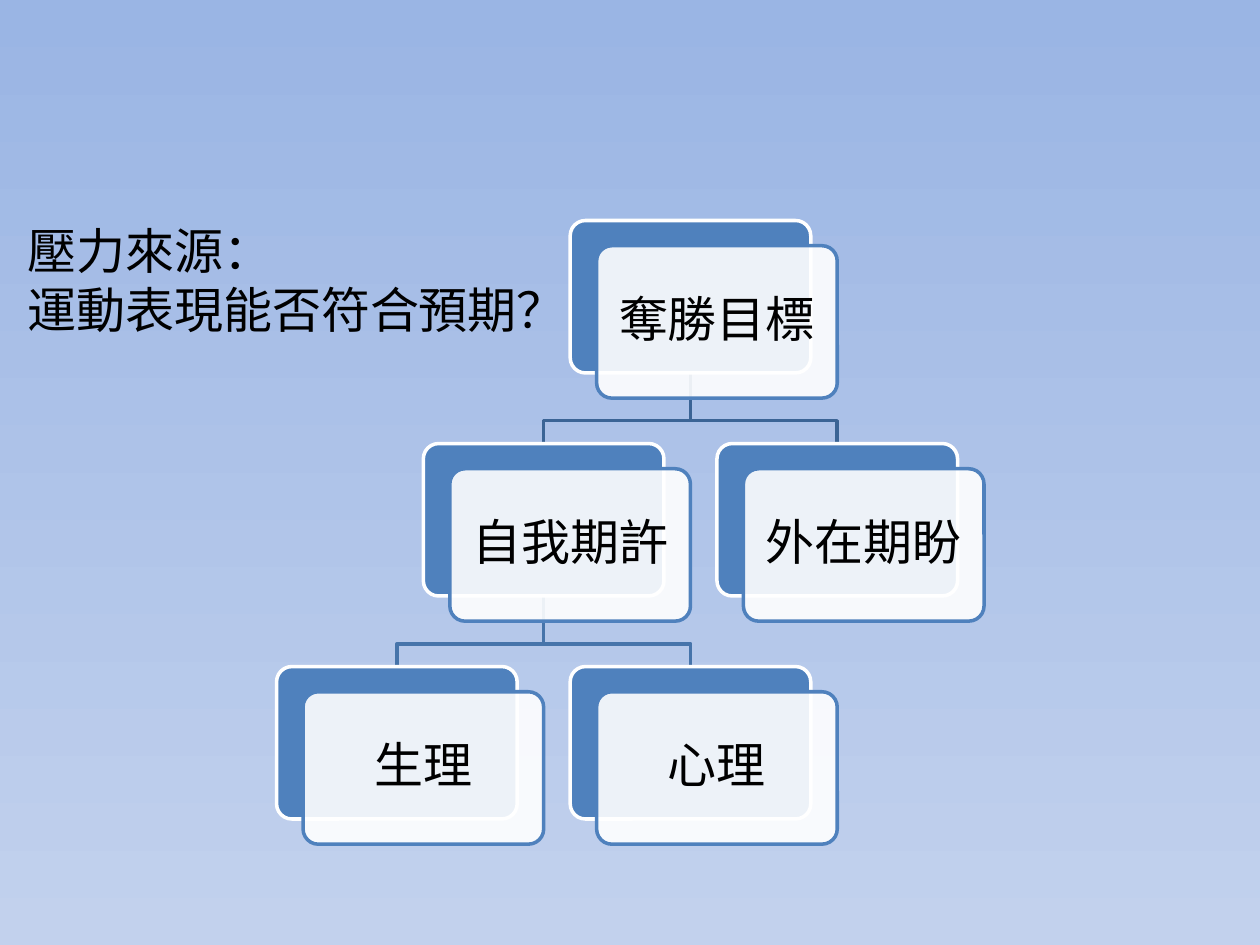
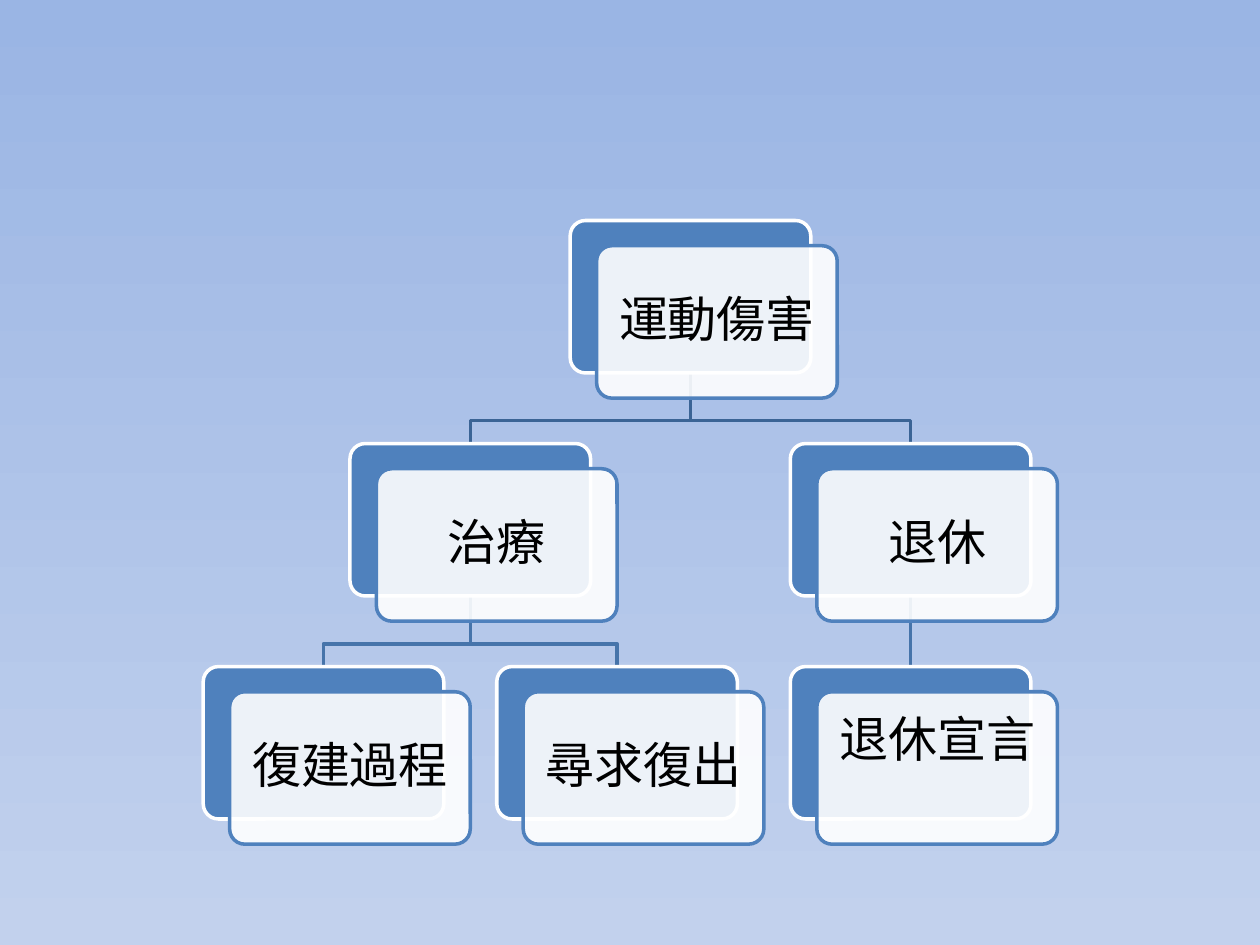
from lxml import etree
from pptx import Presentation
from pptx import util as u
from pptx.dml.color import RGBColor
from pptx.enum import shapes, text
from pptx.oxml import ns

WIDE, HIGH = 10, 7.5
FONT, SIZE = "Calibri", 28
SKY, MIST, BLUE, WHITE, BLACK = "9AB5E4", "C2D1ED", "4F81BD", "FFFFFF", "000000"
EDGES = ["3B6495", "4674AA"]
COL, ROW = 2.33, 1.77
CARD_W, CARD_H = 1.91, 1.21
SHIFT_X, SHIFT_Y = 0.21, 0.2
BEND = 0.38
ROOT = (5.48, 1.75)

GOAL = ("奪勝目標", 0, [
    ("自我期許", -0.5, [("生理", -1, []), ("心理", 0, [])]),
    ("外在期盼", 0.5, []),
])
INJURY = ("運動傷害", 0, [
    ("治療", -0.75, [("復建過程", -1.25, []), ("尋求復出", -0.25, [])]),
    ("退休", 0.75, [("退休宣言", 0.75, [])]),
])
LIFT = {"退休宣言": 0.42}


def tint(code):
    """Turn a hex string into a colour."""
    return RGBColor.from_string(code)


def stroke(shape, code):
    """Give a shape or connector its 2 pt line."""
    shape.line.color.rgb = tint(code)
    shape.line.width = u.Pt(2)


def style(para):
    """Set the shared font on a paragraph's runs."""
    for run in para.runs:
        run.font.name, run.font.size = FONT, u.Pt(SIZE)
        run.font.color.rgb = tint(BLACK)


def panel(slide, left, top, fill, line):
    """Add one rounded panel of a card."""
    box = slide.shapes.add_shape(
        shapes.MSO_SHAPE.ROUNDED_RECTANGLE,
        *map(u.Inches, (left, top, CARD_W, CARD_H)))
    box.adjustments[0] = 0.1
    box.shadow.inherit = False
    box.fill.solid()
    box.fill.fore_color.rgb = tint(fill)
    stroke(box, line)
    return box


def card(slide, mid, top, label):
    """Add a blue panel with a see-through label panel; return the blue one."""
    left = mid - CARD_W / 2
    back = panel(slide, left, top, BLUE, WHITE)
    front = panel(slide, left + SHIFT_X, top + SHIFT_Y, WHITE, BLUE)
    hue = front.fill._xPr.find(".//" + ns.qn("a:srgbClr"))
    etree.SubElement(hue, ns.qn("a:alpha"), val="90000")
    frame = front.text_frame
    frame.word_wrap = True
    frame.vertical_anchor = text.MSO_ANCHOR.MIDDLE
    frame.margin_left = frame.margin_right = frame.margin_top = u.Inches(0.12)
    frame.margin_bottom = u.Inches(0.12 + LIFT.get(label, 0))
    frame.text = label
    para = frame.paragraphs[0]
    para.alignment = text.PP_ALIGN.CENTER
    para.line_spacing = 0.9
    style(para)
    return back


def link(slide, upper, lower, code):
    """Join two cards, straight or with a bend, behind all cards."""
    x1, y1 = upper.left + upper.width // 2, upper.top + upper.height
    x2, y2 = lower.left + lower.width // 2, lower.top
    if x1 == x2:
        edge = slide.shapes.add_connector(
            shapes.MSO_CONNECTOR.STRAIGHT, x1, y1, x2, y2)
        edge.begin_connect(upper, 2)
        edge.end_connect(lower, 0)
        stroke(edge, code)
        etree.SubElement(edge._element.spPr, ns.qn("a:effectLst"))
    else:
        turn = y1 + u.Inches(BEND)
        pen = slide.shapes.build_freeform(x1, y1)
        pen.add_line_segments([(x1, turn), (x2, turn), (x2, y2)], close=False)
        edge = pen.convert_to_shape()
        edge.fill.background()
        edge.shadow.inherit = False
        stroke(edge, code)
    node = edge._element
    node.getparent().insert(2, node)


def tree(slide, node, root, depth=0):
    """Draw a node and its branches on the grid below the root point."""
    label, col, kids = node
    mid, top = root
    back = card(slide, mid + col * COL, top + depth * ROW, label)
    for kid in kids:
        link(slide, back, tree(slide, kid, root, depth + 1), EDGES[depth])
    return back


def note(slide, lines, box):
    """Add a plain text box with one paragraph a line."""
    frame = slide.shapes.add_textbox(*map(u.Inches, box)).text_frame
    frame.word_wrap = True
    frame.text = "\n".join(lines)
    for para in frame.paragraphs:
        style(para)


def paint(master):
    """Give the master its vertical gradient."""
    fill = master.background.fill
    fill.gradient()
    fill.gradient_angle = 270
    for stop, code in zip(fill.gradient_stops, (SKY, MIST)):
        stop.color.rgb = tint(code)


def main():
    """Build and save both slides."""
    deck = Presentation()
    deck.slide_width, deck.slide_height = u.Inches(WIDE), u.Inches(HIGH)
    paint(deck.slide_master)
    blank = deck.slide_layouts[6]
    first, second = (deck.slides.add_slide(blank) for _ in range(2))
    tree(first, GOAL, ROOT)
    note(first, ["壓力來源：", "運動表現能否符合預期？"], (0.12, 1.7, 4.52, 1.04))
    tree(second, INJURY, ROOT)
    deck.save("out.pptx")


if __name__ == "__main__":
    main()
